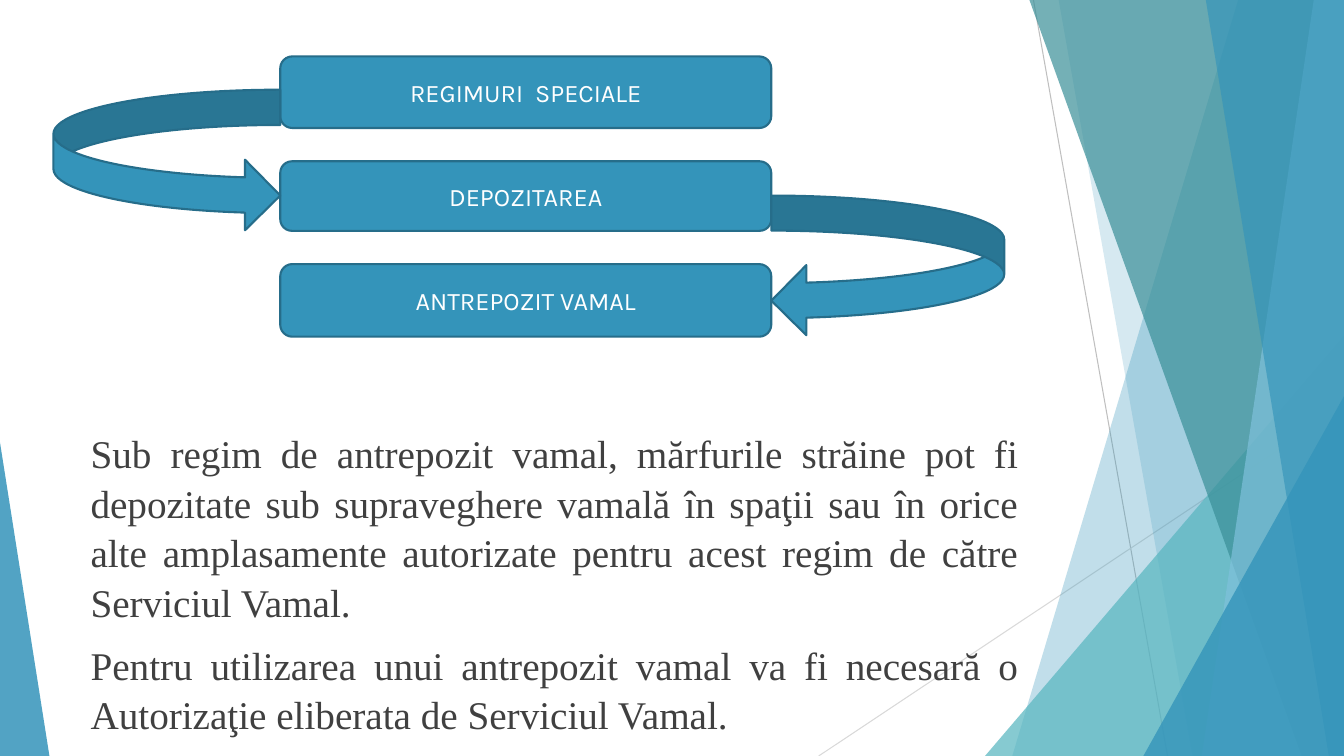
import dataclasses

import pptx
import pptx.dml.color
import pptx.enum.shapes
import pptx.enum.text
import pptx.oxml
import pptx.oxml.ns
import pptx.util

PX = 9144  # EMU per px, 100 px to the inch
WIDE, HIGH = 1333, 750
BLUE, EDGE = "3494BA", "266D8A"
SHAPE = pptx.enum.shapes.MSO_SHAPE
ALIGN = pptx.enum.text.PP_ALIGN
ANCHOR = pptx.enum.text.MSO_ANCHOR


@dataclasses.dataclass
class Ray:
    start: tuple[int, int]
    end: tuple[int, int]
    color: str


@dataclasses.dataclass
class Band:
    """A shard from the top edge to the bottom edge, flush with the right side."""
    top: int
    base: int
    color: str
    alpha: int


@dataclasses.dataclass
class Wedge:
    """A right triangle standing on the bottom edge; peak is 0 left, 1 right."""
    left: int
    top: int
    width: int
    peak: int
    color: str
    alpha: int


@dataclasses.dataclass
class Block:
    kind: SHAPE
    left: int
    top: int
    width: int
    height: int
    label: str = ""


RAYS = [
    Ray((1025, 0), (1158, HIGH), "BFBFBF"),
    Ray((WIDE, 403), (812, HIGH), "D9D9D9"),
]
SHARDS = [
    Band(1228, 1004, BLUE, 30),
    Band(1050, 1183, BLUE, 20),
    Wedge(977, 333, 356, 1, "58B6C0", 72),
    Band(1021, 1291, "3A8F98", 70),
    Band(1303, 1192, "7FC1DB", 70),
    Band(1196, 1318, BLUE, 65),
    Wedge(1134, 393, 199, 1, BLUE, 80),
    Wedge(0, 439, 49, 0, BLUE, 85),
]
BLOCKS = [
    Block(SHAPE.ROUNDED_RECTANGLE, 278, 56, 487, 71, "REGIMURI  SPECIALE"),
    Block(SHAPE.ROUNDED_RECTANGLE, 278, 160, 487, 69, "DEPOZITAREA"),
    Block(SHAPE.ROUNDED_RECTANGLE, 278, 262, 487, 72, "ANTREPOZIT VAMAL"),
    Block(SHAPE.CURVED_RIGHT_ARROW, 53, 89, 225, 140),
    Block(SHAPE.CURVED_LEFT_ARROW, 765, 194, 231, 139),
]
BODY = [
    "Sub regim de antrepozit vamal, mărfurile străine pot fi depozitate sub "
    "supraveghere vamală în spaţii sau în orice alte amplasamente autorizate "
    "pentru acest regim de către Serviciul Vamal.",
    "Pentru utilizarea unui antrepozit vamal va fi necesară o Autorizaţie "
    "eliberata de Serviciul Vamal.",
]


def scale(*sizes: int) -> list[int]:
    return [size * PX for size in sizes]


def tint(part, color: str) -> None:
    """Give a fill or a line a solid colour."""
    fill = getattr(part, "fill", part)
    fill.solid()
    fill.fore_color.rgb = pptx.dml.color.RGBColor.from_string(color)


def write(frame, lines: list[str], *, font: str, size: int, color: str,
          align: ALIGN, anchor: ANCHOR, before: int = 0, pitch: float = 1.0) -> None:
    frame.word_wrap = True
    frame.vertical_anchor = anchor
    for index, line in enumerate(lines):
        para = frame.add_paragraph() if index else frame.paragraphs[0]
        para.alignment = align
        para.space_before = pptx.util.Pt(before)
        para.line_spacing = pitch
        run = para.add_run()
        run.text = line
        run.font.name = font
        run.font.size = pptx.util.Pt(size)
        tint(run.font.fill, color)


def draw_ray(slide, ray: Ray) -> None:
    line = slide.shapes.add_connector(
        pptx.enum.shapes.MSO_CONNECTOR.STRAIGHT, *scale(*ray.start, *ray.end))
    tint(line.line, ray.color)
    line.line.width = pptx.util.Pt(0.75)
    line._element.spPr.append(pptx.oxml.parse_xml(
        f"<a:effectLst {pptx.oxml.ns.nsdecls('a')}/>"))


def draw_shard(slide, shard: Band | Wedge) -> None:
    if isinstance(shard, Band):
        form = slide.shapes.build_freeform(shard.top, 0, scale=PX)
        form.add_line_segments([(WIDE, 0), (WIDE, HIGH), (shard.base, HIGH)])
        shape = form.convert_to_shape()
    else:
        shape = slide.shapes.add_shape(
            SHAPE.ISOSCELES_TRIANGLE,
            *scale(shard.left, shard.top, shard.width, HIGH - shard.top))
        shape.adjustments[0] = shard.peak
    shape.shadow.inherit = False
    shape.line.fill.background()
    tint(shape.fill, shard.color)
    hue = shape._element.spPr.find(".//" + pptx.oxml.ns.qn("a:srgbClr"))
    hue.append(pptx.oxml.parse_xml(
        f"<a:alpha {pptx.oxml.ns.nsdecls('a')} val='{shard.alpha * 1000}'/>"))


def draw_block(slide, block: Block) -> None:
    shape = slide.shapes.add_shape(
        block.kind, *scale(block.left, block.top, block.width, block.height))
    shape.shadow.inherit = False
    tint(shape.fill, BLUE)
    tint(shape.line, EDGE)
    shape.line.width = pptx.util.Pt(1.5)
    if block.label:
        write(shape.text_frame, [block.label], font="Karla", size=18,
              color="FFFFFF", align=ALIGN.CENTER, anchor=ANCHOR.MIDDLE)


def main() -> None:
    deck = pptx.Presentation()
    deck.slide_width, deck.slide_height = scale(WIDE, HIGH)
    slide = deck.slides.add_slide(deck.slide_layouts[6])
    for ray in RAYS:
        draw_ray(slide, ray)
    for shard in SHARDS:
        draw_shard(slide, shard)
    box = slide.shapes.add_textbox(*scale(80, 419, 940, 331))
    write(box.text_frame, BODY, font="Times New Roman", size=28, color="404040",
          align=ALIGN.JUSTIFY, anchor=ANCHOR.TOP, before=10, pitch=1.05)
    for block in BLOCKS:
        draw_block(slide, block)
    deck.save("out.pptx")


if __name__ == "__main__":
    main()
